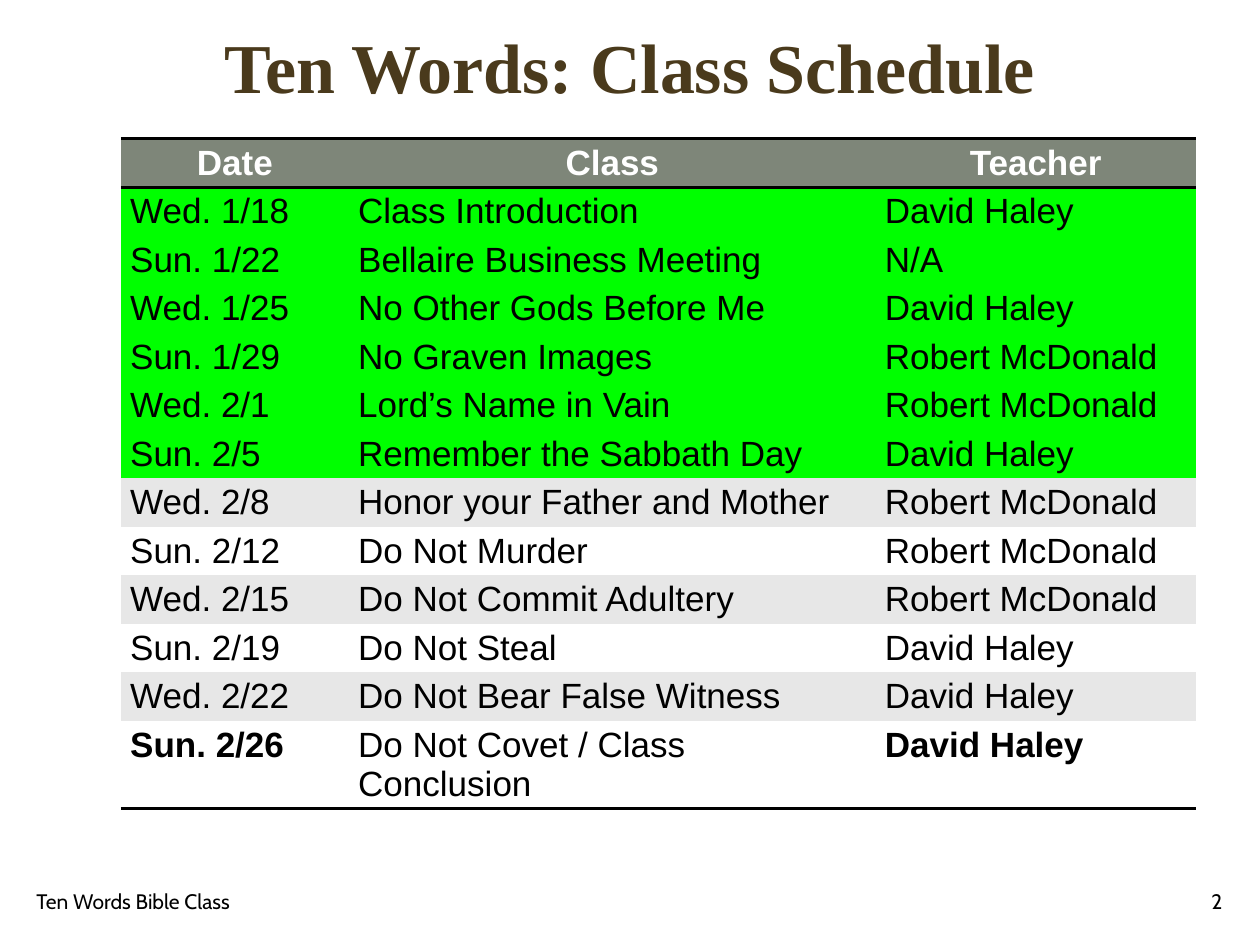
import pptx
import pptx.dml.color
import pptx.enum.text
import pptx.oxml
import pptx.oxml.ns
import pptx.util

Pt = pptx.util.Pt
ALIGN = pptx.enum.text.PP_ALIGN
MIDDLE = pptx.enum.text.MSO_ANCHOR.MIDDLE

COLORS = {
    "title": "4A3A1C",
    "header": "7E8679",
    "done": "00FF00",
    "band": "E7E7E7",
    "white": "FFFFFF",
    "black": "000000",
}
PLAIN_TABLE_STYLE = "{2D5ABB26-0587-4C30-8999-92F81FD0307C}"
COLUMN_WIDTHS = (130.3, 301, 182.9)
ROW_HEIGHT = 21.6
CLASSES_DONE = 6
SCHEDULE = [
    ("Date", "Class", "Teacher"),
    ("Wed. 1/18", "Class Introduction", "David Haley"),
    ("Sun. 1/22", "Bellaire Business Meeting", "N/A"),
    ("Wed. 1/25", "No Other Gods Before Me", "David Haley"),
    ("Sun. 1/29", "No Graven Images", "Robert McDonald"),
    ("Wed. 2/1", "Lord’s Name in Vain", "Robert McDonald"),
    ("Sun. 2/5", "Remember the Sabbath Day", "David Haley"),
    ("Wed. 2/8", "Honor your Father and Mother", "Robert McDonald"),
    ("Sun. 2/12", "Do Not Murder", "Robert McDonald"),
    ("Wed. 2/15", "Do Not Commit Adultery", "Robert McDonald"),
    ("Sun. 2/19", "Do Not Steal", "David Haley"),
    ("Wed. 2/22", "Do Not Bear False Witness", "David Haley"),
    ("Sun. 2/26", "Do Not Covet / Class Conclusion", "David Haley"),
]


def rgb(name):
    """Return the named colour."""
    return pptx.dml.color.RGBColor.from_string(COLORS[name])


def write(frame, text, font, size, color, bold=False, align=ALIGN.LEFT):
    """Put one formatted paragraph into a text frame."""
    frame.text = text
    para = frame.paragraphs[0]
    para.alignment = align
    for span in para.runs:
        span.font.name = font
        span.font.size = Pt(size)
        span.font.bold = bold
        span.font.color.rgb = rgb(color)
    return para


def add_title(page, left, top, width, height):
    """Place and format the title placeholder."""
    box = page.shapes.title
    box.left, box.top, box.width, box.height = map(Pt, (left, top, width, height))
    box.text_frame.vertical_anchor = MIDDLE
    para = write(box.text_frame, "Ten Words: Class Schedule", "Times New Roman",
                 40, "title", True, ALIGN.CENTER)
    para.line_spacing = 0.9


def rule_cell(cell, sides):
    """Draw black rules on the given sides of a cell, listed top before bottom."""
    properties = cell._tc.get_or_add_tcPr()
    for position, side in enumerate(sides):
        properties.insert(position, pptx.oxml.parse_xml(
            f'<a:ln{side} {pptx.oxml.ns.nsdecls("a")} w="{Pt(2)}"><a:solidFill>'
            f'<a:srgbClr val="{COLORS["black"]}"/></a:solidFill></a:ln{side}>'))


def row_fill(row):
    """Name the fill of a table row."""
    if row == 0:
        return "header"
    if row <= CLASSES_DONE:
        return "done"
    return "band" if row % 2 else "white"


def fill_cell(cell, row, column):
    """Write and format one cell of the schedule."""
    header, last = row == 0, row == len(SCHEDULE) - 1
    cell.margin_left = cell.margin_right = Pt(5.3)
    cell.margin_top = cell.margin_bottom = Pt(2.7)
    cell.fill.solid()
    cell.fill.fore_color.rgb = rgb(row_fill(row))
    write(cell.text_frame, SCHEDULE[row][column], "Arial", 20,
          "white" if header else "black",
          header or (last and column != 1),
          ALIGN.CENTER if header else ALIGN.LEFT)
    rule_cell(cell, "TB" if header else "B" if last else "")


def add_schedule(page, left, top):
    """Build the class schedule table."""
    table = page.shapes.add_table(
        len(SCHEDULE), len(COLUMN_WIDTHS), Pt(left), Pt(top),
        Pt(sum(COLUMN_WIDTHS)), Pt(ROW_HEIGHT * len(SCHEDULE))).table
    table._tbl.tblPr.find(pptx.oxml.ns.qn("a:tableStyleId")).text = PLAIN_TABLE_STYLE
    for column, width in zip(table.columns, COLUMN_WIDTHS):
        column.width = Pt(width)
    for row, line in enumerate(table.rows):
        line.height = Pt(ROW_HEIGHT)
        for column, cell in enumerate(line.cells):
            fill_cell(cell, row, column)


def add_footer(page, left, top, width, height, text, align):
    """Add one footer text."""
    box = page.shapes.add_textbox(*map(Pt, (left, top, width, height)))
    box.text_frame.word_wrap = True
    box.text_frame.vertical_anchor = MIDDLE
    write(box.text_frame, text, "Cabin", 12, "black", align=align)


def main():
    """Build and save the deck."""
    deck = pptx.Presentation()
    deck.slide_width, deck.slide_height = Pt(720), Pt(540)
    page = deck.slides.add_slide(deck.slide_layouts[5])
    add_title(page, 49.7, 10.8, 620.6, 59)
    add_schedule(page, 69.1, 79.2)
    add_footer(page, 13.7, 500.4, 243.4, 28.8, "Ten Words Bible Class", ALIGN.LEFT)
    add_footer(page, 543.6, 500.4, 162, 28.8, "2", ALIGN.RIGHT)
    deck.save("out.pptx")


if __name__ == "__main__":
    main()
